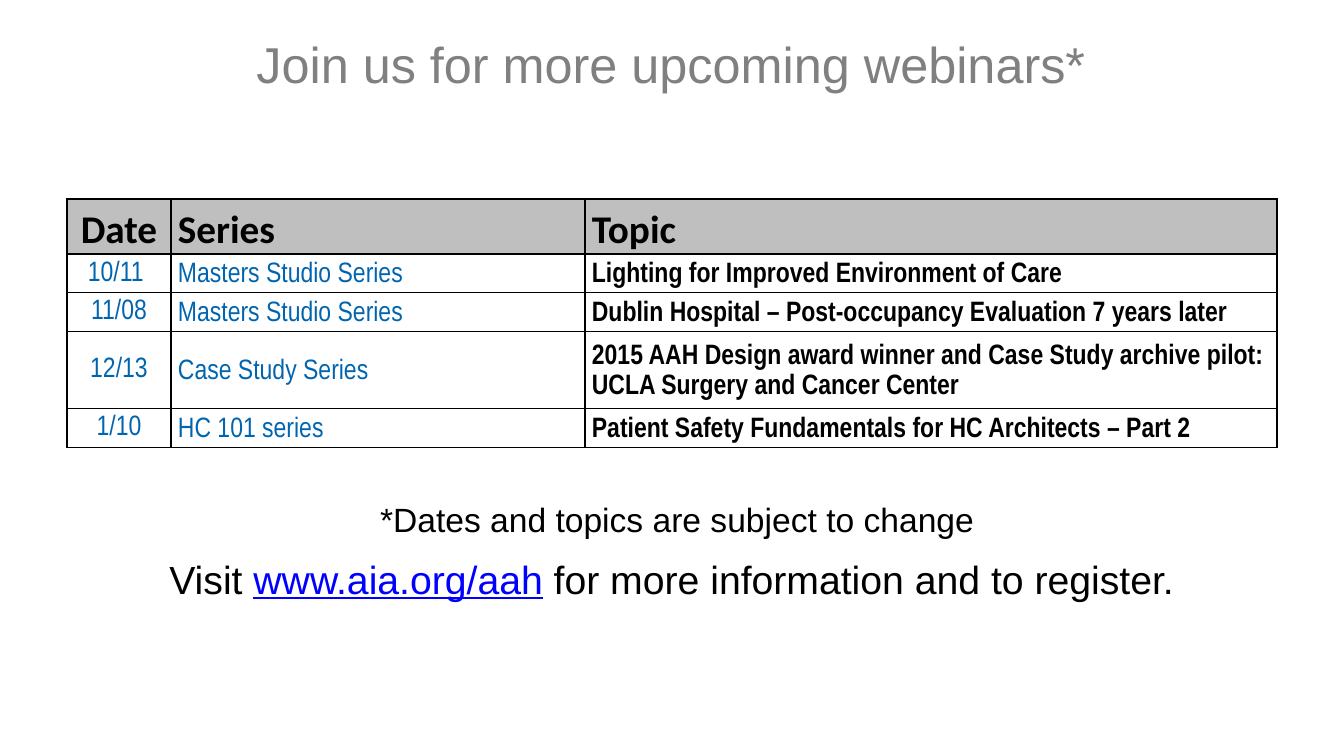
from pptx import Presentation
from pptx.dml.color import RGBColor
from pptx.enum.text import MSO_ANCHOR, PP_ALIGN
from pptx.oxml import parse_xml
from pptx.oxml.ns import nsdecls
from pptx.util import Emu, Pt

PX = 914400 / 100.8
COLORS = {"title": "808080", "text": "000000", "link": "0000FF",
          "series": "0065B0", "header": "BFBFBF", "border": "000000"}


def px(length):
    return Emu(round(length * PX))


def add_run(paragraph, text, size, color, font="Arial", bold=False, underline=False):
    run = paragraph.add_run()
    run.text = text
    run.font.name = font
    run.font.size = Pt(size)
    run.font.bold = bold
    run.font.underline = underline
    run.font.color.rgb = RGBColor.from_string(COLORS[color])


presentation = Presentation()
presentation.slide_width = px(1344)
presentation.slide_height = px(756)
slide = presentation.slides.add_slide(presentation.slide_layouts[6])

# Title, note and registration line: box, anchor, size, runs
text_boxes = [
    ((73, 0, 1210, 126), MSO_ANCHOR.MIDDLE, 36,
     [("Join us for more upcoming webinars* ", "title")]),
    ((134, 550, 1086, 60), MSO_ANCHOR.TOP, 28,
     [("Visit ", "text"), ("www.aia.org/aah", "link"),
      (" for more information and to register. ", "text")]),
    ((295, 494, 764, 50), MSO_ANCHOR.TOP, 24,
     [("*Dates and topics are subject to change", "text")]),
]
for box, anchor, size, runs in text_boxes:
    shape = slide.shapes.add_textbox(*map(px, box))
    shape.text_frame.word_wrap = True
    shape.text_frame.vertical_anchor = anchor
    paragraph = shape.text_frame.paragraphs[0]
    paragraph.alignment = PP_ALIGN.CENTER
    for text, color in runs:
        add_run(paragraph, text, size, color, underline=color == "link")

# Webinar schedule
schedule = [
    ("Date", "Series", "Topic"),
    ("10/11 ", "Masters Studio Series", "Lighting for Improved Environment of Care"),
    ("11/08", "Masters Studio Series",
     "Dublin Hospital – Post-occupancy Evaluation 7 years later"),
    ("12/13", "Case Study Series",
     "2015 AAH Design award winner and Case Study archive pilot: "
     "UCLA Surgery and Cancer Center"),
    ("1/10", "HC 101 series", "Patient Safety Fundamentals for HC Architects – Part 2"),
]
column_widths = [104, 414, 692]
row_heights = [55, 30, 30, 61, 30]
table = slide.shapes.add_table(
    len(schedule), len(column_widths), px(67), px(199),
    px(sum(column_widths)), px(sum(row_heights))).table
for column, width in zip(table.columns, column_widths):
    column.width = px(width)
for row, height in zip(table.rows, row_heights):
    row.height = px(height)

for row_index, entries in enumerate(schedule):
    for column_index, text in enumerate(entries):
        cell = table.cell(row_index, column_index)
        is_header = row_index == 0
        is_date = column_index == 0
        tight = is_date and not is_header
        cell.margin_left = cell.margin_right = px(1 if tight else 7)
        cell.margin_top = px(1 if tight else 0)
        cell.margin_bottom = 0
        cell.vertical_anchor = MSO_ANCHOR.TOP if is_header else MSO_ANCHOR.MIDDLE

        paragraph = cell.text_frame.paragraphs[0]
        paragraph.alignment = PP_ALIGN.CENTER if is_date else PP_ALIGN.LEFT
        if not tight:
            paragraph.line_spacing = 1.15
        if is_header:
            add_run(paragraph, text, 28, "text", "Calibri", bold=True)
        else:
            is_topic = column_index == 2
            add_run(paragraph, text, 20, "text" if is_topic else "series",
                    "Arial Narrow", bold=is_topic)

        # Borders come before the fill in the cell properties
        properties = cell._tc.get_or_add_tcPr()
        for side in ("lnL", "lnR", "lnT", "lnB"):
            properties.append(parse_xml(
                f'<a:{side} {nsdecls("a")} w="{Pt(1)}"><a:solidFill>'
                f'<a:srgbClr val="{COLORS["border"]}"/></a:solidFill></a:{side}>'))
        if is_header:
            cell.fill.solid()
            cell.fill.fore_color.rgb = RGBColor.from_string(COLORS["header"])
        else:
            cell.fill.background()

presentation.save("out.pptx")
